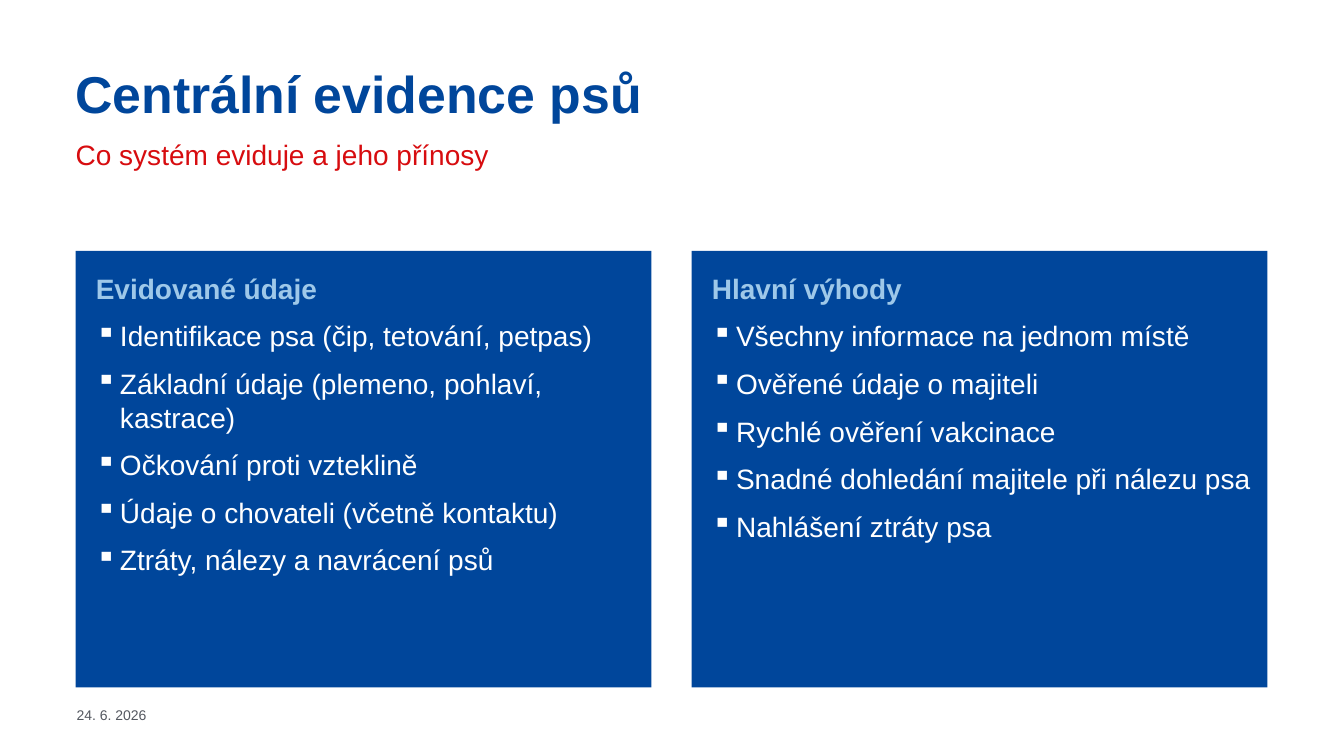
import pptx
import pptx.dml.color
import pptx.enum.shapes
import pptx.enum.text
import pptx.oxml.ns
import pptx.util
from lxml import etree

Inches = pptx.util.Inches
Pt = pptx.util.Pt
ANCHOR = pptx.enum.text.MSO_ANCHOR

COLORS = {
    "blue": "00469B",
    "red": "D70C0F",
    "light_blue": "9EC8E9",
    "white": "FFFFFF",
    "gray": "545860",
}
FONT = "Arial"

# Grid: two equal columns between the side margins
SLIDE_W, SLIDE_H = 13.33, 7.5
MARGIN = 0.75
GUTTER = 0.4
COLUMN_W = 5.71
PANEL_TOP, PANEL_H = 2.49, 4.33
HEADER_W = 10.83
BULLET_INDENT = 0.24

PANELS = [
    ("Evidované údaje", [
        "Identifikace psa (čip, tetování, petpas)",
        "Základní údaje (plemeno, pohlaví, kastrace)",
        "Očkování proti vzteklině",
        "Údaje o chovateli (včetně kontaktu)",
        "Ztráty, nálezy a navrácení psů",
    ]),
    ("Hlavní výhody", [
        "Všechny informace na jednom místě",
        "Ověřené údaje o majiteli",
        "Rychlé ověření vakcinace",
        "Snadné dohledání majitele při nálezu psa",
        "Nahlášení ztráty psa",
    ]),
]


def rgb(name):
    return pptx.dml.color.RGBColor.from_string(COLORS[name])


def add_bullet(paragraph):
    properties = paragraph._p.get_or_add_pPr()
    properties.set("marL", str(Inches(BULLET_INDENT)))
    properties.set("indent", str(-Inches(BULLET_INDENT)))
    bullet = etree.SubElement(properties, pptx.oxml.ns.qn("a:buChar"))
    bullet.set("char", "▪")


def write(paragraph, text, size=20, color="white", bold=False,
          bullet=False, after=0, line_spacing=None):
    """Fill one paragraph with formatted text."""
    paragraph.alignment = pptx.enum.text.PP_ALIGN.LEFT
    paragraph.space_after = Pt(after)
    if line_spacing:
        paragraph.line_spacing = line_spacing
    if bullet:
        add_bullet(paragraph)
    run = paragraph.add_run()
    run.text = text
    run.font.name = FONT
    run.font.size = Pt(size)
    run.font.bold = bold
    run.font.color.rgb = rgb(color)


def set_frame(frame, insets, anchor=ANCHOR.TOP):
    frame.word_wrap = True
    frame.vertical_anchor = anchor
    (frame.margin_left, frame.margin_top,
     frame.margin_right, frame.margin_bottom) = map(Inches, insets)


def add_label(slide, text, box, insets=(0, 0, 0, 0), anchor=ANCHOR.TOP, **style):
    label = slide.shapes.add_textbox(*map(Inches, box))
    set_frame(label.text_frame, insets, anchor)
    write(label.text_frame.paragraphs[0], text, **style)


def add_panel(slide, column, heading, items):
    left = MARGIN + column * (COLUMN_W + GUTTER)
    panel = slide.shapes.add_shape(
        pptx.enum.shapes.MSO_SHAPE.RECTANGLE,
        *map(Inches, (left, PANEL_TOP, COLUMN_W, PANEL_H)))
    panel.shadow.inherit = False
    panel.fill.solid()
    panel.fill.fore_color.rgb = rgb("blue")
    panel.line.fill.background()
    frame = panel.text_frame
    set_frame(frame, (0.2, 0.2, 0.16, 0.08))
    write(frame.paragraphs[0], heading, color="light_blue", bold=True, after=10)
    for item in items:
        write(frame.add_paragraph(), item, bullet=True, after=10)


def main():
    deck = pptx.Presentation()
    deck.slide_width, deck.slide_height = Inches(SLIDE_W), Inches(SLIDE_H)
    slide = deck.slides.add_slide(deck.slide_layouts[6])

    # Heading and subtitle
    add_label(slide, "Centrální evidence psů", (MARGIN, 0.68, HEADER_W, 0.66),
              size=37, color="blue", bold=True, line_spacing=0.9)
    add_label(slide, "Co systém eviduje a jeho přínosy",
              (MARGIN, 1.36, HEADER_W, 0.84), color="red")

    # Content panels
    for column, (heading, items) in enumerate(PANELS):
        add_panel(slide, column, heading, items)

    # Date in the footer
    add_label(slide, "24. 6. 2026", (MARGIN + 0.01, 6.89, 5.12, 0.4),
              insets=(0, 0.04, 0, 0.04), anchor=ANCHOR.MIDDLE,
              size=10, color="gray")

    deck.save("out.pptx")


if __name__ == "__main__":
    main()
